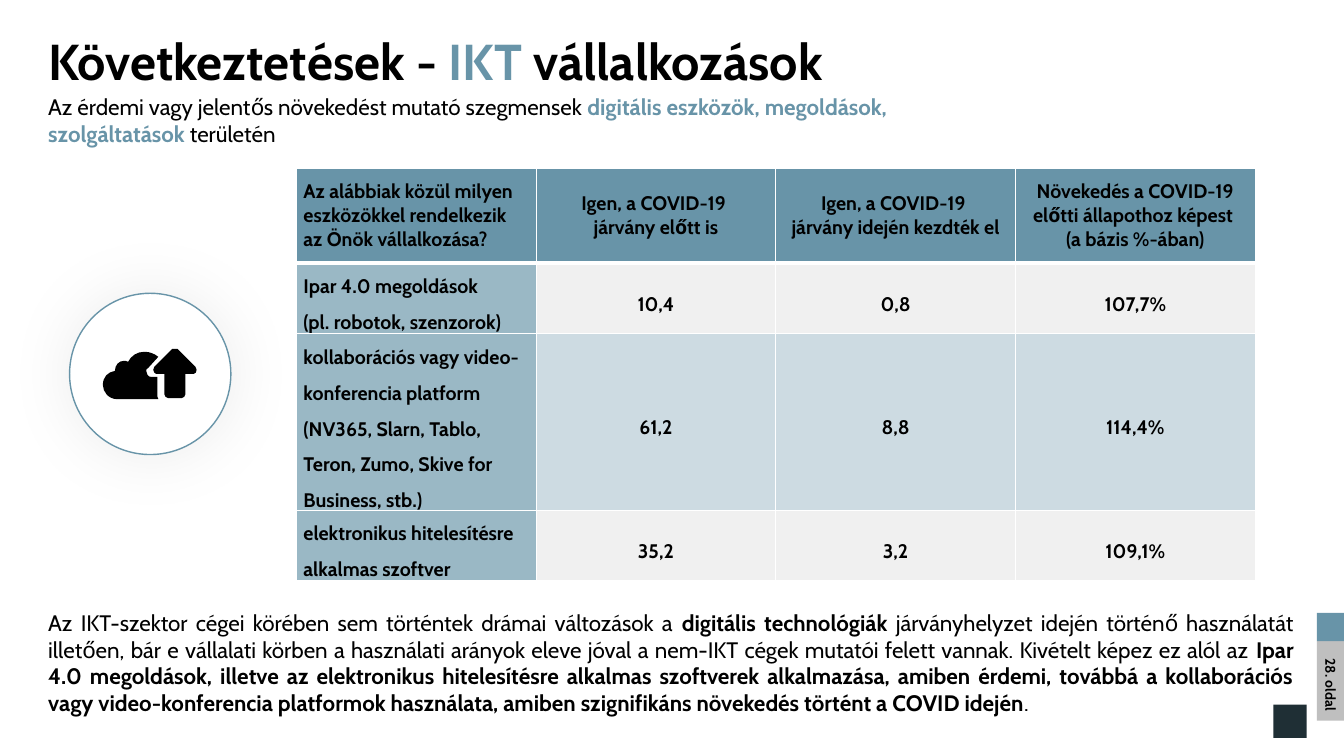
from dataclasses import dataclass

from lxml.etree import SubElement
from pptx import Presentation
from pptx.dml.color import RGBColor
from pptx.enum.shapes import MSO_SHAPE
from pptx.enum.text import MSO_ANCHOR, MSO_AUTO_SIZE, PP_ALIGN
from pptx.oxml import parse_xml
from pptx.oxml.ns import nsdecls, qn
from pptx.util import Inches, Pt


@dataclass(frozen=True)
class Theme:
    font: str = "Cabin"
    black: str = "000000"
    white: str = "FFFFFF"
    accent: str = "6894A8"
    row_label: str = "9AB8C5"
    band_light: str = "F0F0F0"
    band_blue: str = "CDDBE2"
    page_gray: str = "BFBFBF"
    corner: str = "1F2F35"
    title_size: int = 36
    body_size: int = 16
    table_size: int = 14
    page_size: int = 10


THEME = Theme()

TABLE_ROWS = [
    ("Az alábbiak közül milyen eszközökkel rendelkezik az Önök vállalkozása?",
     "Igen, a COVID-19 \njárvány előtt is",
     "Igen, a COVID-19 \njárvány idején kezdték el",
     "Növekedés a COVID-19 előtti állapothoz képest \n(a bázis %-ában)"),
    ("Ipar 4.0 megoldások \n(pl. robotok, szenzorok)", "10,4", "0,8", "107,7%"),
    ("kollaborációs vagy video-konferencia platform (NV365, Slarn, Tablo, "
     "Teron, Zumo, Skive for Business, stb.)", "61,2", "8,8", "114,4%"),
    ("elektronikus hitelesítésre alkalmas szoftver", "35,2", "3,2", "109,1%"),
]
ROW_HEIGHTS = (0.94, 0.61, 1.59, 0.61)

# Outlines inside the icon circle: a pair is a corner, six numbers are a Bézier curve
CLOUD = [
    (0.87, 1.02), (0.87, 1.03, 0.88, 1.04, 0.88, 1.05), (0.47, 1.05),
    (0.39, 1.05, 0.33, 0.98, 0.33, 0.91), (0.33, 0.83, 0.38, 0.78, 0.45, 0.77),
    (0.45, 0.71, 0.49, 0.67, 0.54, 0.67), (0.55, 0.67, 0.57, 0.67, 0.58, 0.68),
    (0.61, 0.62, 0.67, 0.58, 0.74, 0.58), (0.8, 0.58, 0.84, 0.6, 0.88, 0.63),
    (0.78, 0.74), (0.76, 0.75, 0.76, 0.76, 0.76, 0.77),
    (0.76, 0.8, 0.78, 0.83, 0.81, 0.83), (0.87, 0.83),
]
UP_ARROW = [
    (1.05, 0.55), (1.04, 0.55, 1.03, 0.55, 1.02, 0.55), (0.84, 0.73),
    (0.84, 0.74, 0.83, 0.75, 0.83, 0.76), (0.83, 0.78, 0.85, 0.8, 0.86, 0.8),
    (0.94, 0.8), (0.94, 1), (0.94, 1.02, 0.96, 1.04, 0.98, 1.04),
    (1.11, 1.04), (1.13, 1.04, 1.15, 1.02, 1.15, 1), (1.15, 0.8), (1.23, 0.8),
    (1.25, 0.8, 1.26, 0.78, 1.26, 0.76), (1.26, 0.75, 1.25, 0.74, 1.25, 0.73),
    (1.07, 0.55), (1.06, 0.55, 1.06, 0.55, 1.05, 0.55),
]


def add_runs(paragraph, runs, size):
    """Each run is (text, colour, bold); a newline becomes a line break."""
    for text, color, bold in runs:
        for index, line in enumerate(text.split("\n")):
            if index:
                paragraph.add_line_break()
            run = paragraph.add_run()
            run.text = line
            run.font.name, run.font.size, run.font.bold = THEME.font, Pt(size), bold
            run.font.color.rgb = RGBColor.from_string(color)


def add_text(slide, box, runs, size, align=PP_ALIGN.LEFT, anchor=MSO_ANCHOR.TOP,
             spacing=None, fit=MSO_AUTO_SIZE.NONE):
    frame = slide.shapes.add_textbox(*map(Inches, box)).text_frame
    frame.word_wrap = True
    frame.auto_size = fit
    frame.vertical_anchor = anchor
    paragraph = frame.paragraphs[0]
    paragraph.alignment = align
    paragraph.line_spacing = spacing
    add_runs(paragraph, runs, size)


def paint(shape, color):
    shape.shadow.inherit = False
    shape.fill.solid()
    shape.fill.fore_color.rgb = RGBColor.from_string(color)
    shape.line.fill.background()


def add_block(slide, box, color, kind=MSO_SHAPE.RECTANGLE):
    block = slide.shapes.add_shape(kind, *map(Inches, box))
    paint(block, color)
    return block


def add_heading(slide, left, top, width):
    add_text(slide, (left, top, width, 0.77),
             [("Következtetések - ", THEME.black, True), ("IKT ", THEME.accent, True),
              ("vállalkozások", THEME.black, True)], THEME.title_size, spacing=0.9)
    add_text(slide, (left, top + 0.55, width, 0.64),
             [("Az érdemi vagy jelentős növekedést mutató szegmensek ", THEME.black, False),
              ("digitális eszközök, megoldások, szolgáltatások ", THEME.accent, True),
              ("területén", THEME.black, False)],
             THEME.body_size, anchor=MSO_ANCHOR.MIDDLE, fit=MSO_AUTO_SIZE.SHAPE_TO_FIT_TEXT)


def add_conclusion(slide, box):
    add_text(slide, box, [
        ("Az IKT-szektor cégei körében sem történtek drámai változások a ", THEME.black, False),
        ("digitális technológiák", THEME.black, True),
        (" járványhelyzet idején történő használatát illetően, bár e vállalati körben a "
         "használati arányok eleve jóval a nem-IKT cégek mutatói felett vannak. "
         "Kivételt képez ez alól az ", THEME.black, False),
        ("Ipar 4.0 megoldások, illetve az elektronikus hitelesítésre alkalmas szoftverek "
         "alkalmazása, amiben érdemi, továbbá a kollaborációs vagy video-konferencia "
         "platformok használata, amiben szignifikáns növekedés történt a COVID idején",
         THEME.black, True),
        (".", THEME.black, False)],
        THEME.body_size, PP_ALIGN.JUSTIFY, fit=MSO_AUTO_SIZE.SHAPE_TO_FIT_TEXT)


def add_outline(slide, left, top, outline):
    """Draw the end points as a freeform, then bend the curved segments."""
    ends = [(Inches(left + part[-2]), Inches(top + part[-1])) for part in outline]
    builder = slide.shapes.build_freeform(*ends[0], scale=1.0)
    builder.add_line_segments(ends[1:], close=True)
    shape = builder.convert_to_shape()
    segments = list(shape.element.iter(qn("a:lnTo")))
    for segment, part in zip(segments, outline[1:]):
        if len(part) == 6:
            segment.tag = qn("a:cubicBezTo")
            for index, (x, y) in enumerate((part[:2], part[2:4])):
                control = SubElement(segment, qn("a:pt"),
                                     x=str(Inches(left + x) - shape.left),
                                     y=str(Inches(top + y) - shape.top))
                segment.insert(index, control)
    paint(shape, THEME.black)


def add_cloud_icon(slide, left, top, size):
    circle = add_block(slide, (left, top, size, size), THEME.white, MSO_SHAPE.OVAL)
    circle.line.color.rgb = RGBColor.from_string(THEME.accent)
    circle.line.width = Pt(1)
    # Soft glow around the circle
    glow = SubElement(circle.element.spPr.find(qn("a:effectLst")), qn("a:outerShdw"),
                      blurRad=str(Pt(49)), dist="0", dir="0", algn="ctr", rotWithShape="0")
    color = SubElement(glow, qn("a:srgbClr"), val=THEME.black)
    SubElement(color, qn("a:alpha"), val="7000")
    for outline in (CLOUD, UP_ARROW):
        add_outline(slide, left, top, outline)


def set_borders(cell, **widths):
    for index, side in enumerate("LRTB"):
        cell._tc.get_or_add_tcPr().insert(index, parse_xml(
            f'<a:ln{side} {nsdecls("a")} w="{Pt(widths.get(side, 1))}"><a:solidFill>'
            f'<a:srgbClr val="{THEME.white}"/></a:solidFill></a:ln{side}>'))


def add_usage_table(slide, left, top, width):
    table = slide.shapes.add_table(
        len(TABLE_ROWS), len(TABLE_ROWS[0]), Inches(left), Inches(top),
        Inches(width), Inches(sum(ROW_HEIGHTS))).table
    table.horz_banding = False
    for r, (texts, height) in enumerate(zip(TABLE_ROWS, ROW_HEIGHTS)):
        table.rows[r].height = Inches(height)
        band = THEME.band_light if r % 2 else THEME.band_blue
        for c, text in enumerate(texts):
            cell = table.cell(r, c)
            fill = THEME.accent if r == 0 else THEME.row_label if c == 0 else band
            cell.fill.solid()
            cell.fill.fore_color.rgb = RGBColor.from_string(fill)
            set_borders(cell, T=3 if r == 1 else 1, B=3 if r == 0 else 1)
            cell.margin_left = cell.margin_right = Inches(0.07)
            cell.margin_top = cell.margin_bottom = 0
            cell.vertical_anchor = MSO_ANCHOR.MIDDLE
            paragraph = cell.text_frame.paragraphs[0]
            paragraph.alignment = PP_ALIGN.CENTER if c else PP_ALIGN.LEFT
            paragraph.line_spacing = 1.5 if r else None
            add_runs(paragraph, [(text, THEME.black, True)], THEME.table_size)


def add_page_tab(slide, left, top, width):
    tab = add_block(slide, (left, top + width, width, 0.79), THEME.page_gray)
    tab.element.txBody.bodyPr.set("vert", "vert")
    tab.text_frame.vertical_anchor = MSO_ANCHOR.MIDDLE
    tab.text_frame.margin_right = Inches(0.05)
    paragraph = tab.text_frame.paragraphs[0]
    paragraph.alignment = PP_ALIGN.RIGHT
    add_runs(paragraph, [("28. oldal", THEME.black, True)], THEME.page_size)
    add_block(slide, (left, top, width, width), THEME.accent)


def main():
    deck = Presentation()
    deck.slide_width, deck.slide_height = Inches(13.33), Inches(7.5)
    slide = deck.slides.add_slide(deck.slide_layouts[6])
    add_block(slide, (12.63, 6.99, 0.33, 0.33), THEME.corner)
    add_heading(slide, 0.38, 0.32, 9.71)
    add_conclusion(slide, (0.38, 5.99, 12.55, 1.18))
    add_cloud_icon(slide, 0.69, 2.91, 1.6)
    add_usage_table(slide, 2.94, 1.67, 9.51)
    add_page_tab(slide, 13.06, 6.08, 0.28)
    deck.save("out.pptx")


if __name__ == "__main__":
    main()
